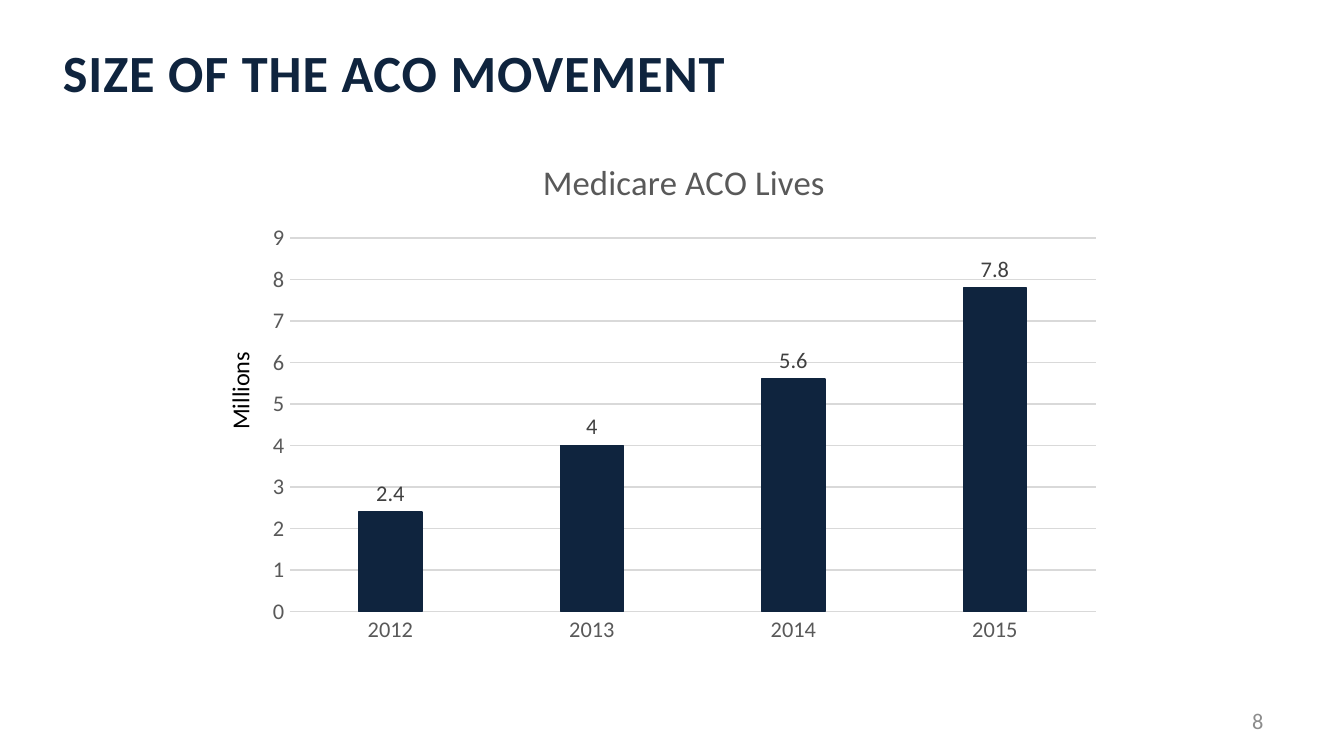
import pptx
import pptx.chart.data
import pptx.dml.color
import pptx.enum.chart
import pptx.enum.text
import pptx.util
from lxml import etree
from pptx.util import Inches

THEME = {
    "font": "Calibri",
    "navy": "0F243E", "black": "000000", "number": "8C8C8C",
    "axis": "595959", "label": "404040", "grid": "D9D9D9",
    "title_size": 28, "chart_title_size": 18.6, "unit_size": 13, "small_size": 12,
    "line": 0.75,
}
ANCHOR = pptx.enum.text.MSO_ANCHOR
ALIGN = pptx.enum.text.PP_ALIGN

SLIDE_WIDTH = 10
SLIDE_HEIGHT = SLIDE_WIDTH * 9 / 16
TITLE = "SIZE OF THE ACO MOVEMENT"
UNIT = "Millions"
PAGE = "8"
CHART_TITLE = "Medicare ACO Lives"
LIVES = {"2012": 2.4, "2013": 4, "2014": 5.6, "2015": 7.8}
CHART_BOX = (1.9, 1, 6.38, 3.86)
PLOT_LAYOUT = {"x": 0.04, "y": 0.2, "w": 0.94, "h": 0.72}


def rgb(name):
    return pptx.dml.color.RGBColor.from_string(THEME[name])


def style(font, size, color, bold=False):
    font.name = THEME["font"]
    font.size = pptx.util.Pt(THEME[size])
    font.color.rgb = rgb(color)
    font.bold = bold


def style_line(line, color):
    line.color.rgb = rgb(color)
    line.width = pptx.util.Pt(THEME["line"])


def add_text(s, text, box, size, color, anchor=ANCHOR.TOP, align=ALIGN.LEFT, bold=False):
    sp = s.shapes.add_textbox(*map(Inches, box))
    tf = sp.text_frame
    tf.word_wrap = True
    tf.vertical_anchor = anchor
    tf.text = text
    p = tf.paragraphs[0]
    p.alignment = align
    style(p.runs[0].font, size, color, bold)
    return sp


def set_plot_layout(chart):
    ns = "{http://schemas.openxmlformats.org/drawingml/2006/chart}"
    plot_area = chart._chartSpace.find(f".//{ns}plotArea")
    for old in plot_area.findall(f"{ns}layout"):
        plot_area.remove(old)
    layout = etree.Element(f"{ns}layout")
    plot_area.insert(0, layout)
    manual = etree.SubElement(layout, f"{ns}manualLayout")
    settings = {"layoutTarget": "inner", "xMode": "edge", "yMode": "edge", **PLOT_LAYOUT}
    for tag, value in settings.items():
        etree.SubElement(manual, ns + tag).set("val", str(value))


def add_lives_chart(s):
    enums = pptx.enum.chart
    data = pptx.chart.data.CategoryChartData()
    data.categories = list(LIVES)
    data.add_series(CHART_TITLE, list(LIVES.values()))
    chart = s.shapes.add_chart(
        enums.XL_CHART_TYPE.COLUMN_CLUSTERED, *map(Inches, CHART_BOX), data).chart
    style(chart.font, "small_size", "axis")
    chart.has_legend = False
    chart.has_title = True
    chart.chart_title.text_frame.text = CHART_TITLE
    title_run = chart.chart_title.text_frame.paragraphs[0].runs[0]
    style(title_run.font, "chart_title_size", "axis")

    for axis in (chart.category_axis, chart.value_axis):
        axis.major_tick_mark = enums.XL_TICK_MARK.NONE
        axis.minor_tick_mark = enums.XL_TICK_MARK.NONE
        style(axis.tick_labels.font, "small_size", "axis")
    style_line(chart.category_axis.format.line, "grid")
    values = chart.value_axis
    values.minimum_scale, values.maximum_scale, values.major_unit = 0, 9, 1
    values.format.line.fill.background()
    style_line(values.major_gridlines.format.line, "grid")

    plot = chart.plots[0]
    plot.gap_width, plot.overlap = 219, -27
    plot.vary_by_categories = False
    series = plot.series[0]
    series.format.fill.solid()
    series.format.fill.fore_color.rgb = rgb("navy")
    style_line(series.format.line, "navy")
    labels = series.data_labels
    labels.show_value = True
    labels.position = enums.XL_LABEL_POSITION.OUTSIDE_END
    style(labels.font, "small_size", "label")
    set_plot_layout(chart)


def main():
    prs = pptx.Presentation()
    prs.slide_width, prs.slide_height = Inches(SLIDE_WIDTH), Inches(SLIDE_HEIGHT)
    s = prs.slides.add_slide(prs.slide_layouts[6])
    title = add_text(s, TITLE, (0.37, 0.31, 9, 0.5), "title_size", "navy",
                     anchor=ANCHOR.BOTTOM, bold=True)
    p = title.text_frame.paragraphs[0]
    p.line_spacing = 0.8
    p.runs[0]._r.get_or_add_rPr().set("spc", "50")
    add_text(s, PAGE, (7.17, 5.21, 2.33, 0.3), "small_size", "number",
             anchor=ANCHOR.MIDDLE, align=ALIGN.RIGHT)
    add_lives_chart(s)
    unit = add_text(s, UNIT, (1.17, 2.52, 1.23, 0.32), "unit_size", "black")
    unit.rotation = 270
    prs.save("out.pptx")


if __name__ == "__main__":
    main()
